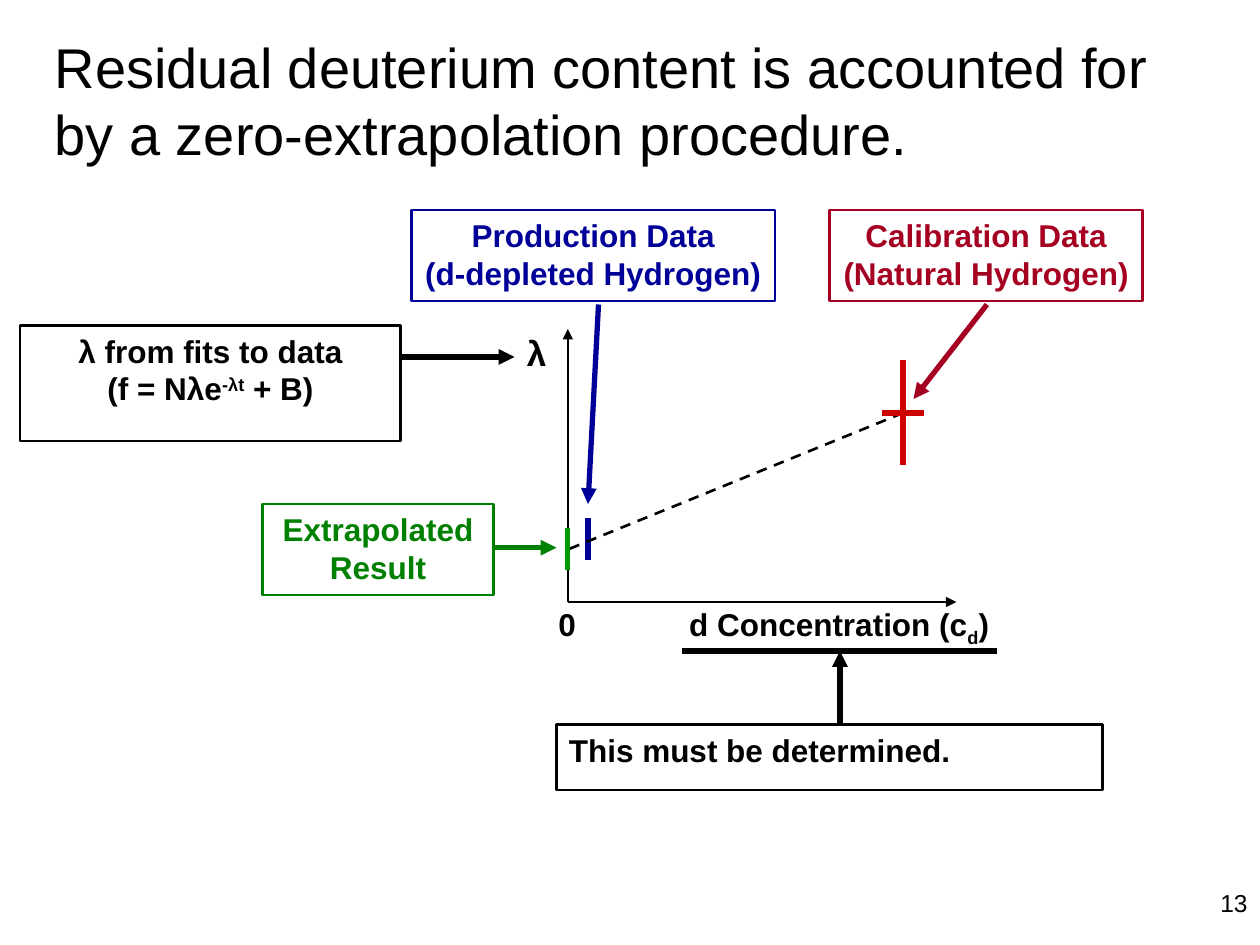
from lxml import etree
from pptx import Presentation
from pptx.dml.color import RGBColor
from pptx.enum.dml import MSO_LINE
from pptx.enum.shapes import MSO_CONNECTOR, MSO_SHAPE
from pptx.enum.text import MSO_ANCHOR, PP_ALIGN
from pptx.oxml.ns import qn
from pptx.util import Pt

STRAIGHT = MSO_CONNECTOR.STRAIGHT
RECTANGLE = MSO_SHAPE.RECTANGLE
DASH = MSO_LINE.DASH
TOP, MIDDLE = MSO_ANCHOR.TOP, MSO_ANCHOR.MIDDLE
LEFT, CENTER, RIGHT = PP_ALIGN.LEFT, PP_ALIGN.CENTER, PP_ALIGN.RIGHT

COLORS = {
    "black": "000000",
    "blue": "000099",
    "red": "CC0000",
    "crimson": "A50021",
    "green": "008000",
    "bright green": "009900",
}


class SlideBuilder:
    """Draws styled elements on one slide, with lengths in points."""

    def __init__(self, slide, font="Arial"):
        self.slide = slide
        self.font = font

    def color(self, name):
        return RGBColor.from_string(COLORS[name])

    def add_text(self, frame, paragraphs, size, color="black", bold=True,
                 align=CENTER, anchor=TOP, wrap=True):
        frame.word_wrap = wrap
        frame.vertical_anchor = anchor
        for index, runs in enumerate(paragraphs):
            paragraph = frame.add_paragraph() if index else frame.paragraphs[0]
            paragraph.alignment = align
            for text, baseline in runs:
                run = paragraph.add_run()
                run.text = text
                run.font.name = self.font
                run.font.size = Pt(size)
                run.font.bold = bold
                run.font.color.rgb = self.color(color)
                if baseline:
                    run._r.get_or_add_rPr().set("baseline", str(baseline * 1000))

    def title(self, bounds, text):
        shape = self.slide.shapes.title
        shape.left, shape.top, shape.width, shape.height = map(Pt, bounds)
        self.add_text(shape.text_frame, [[(text, 0)]], 32, bold=False,
                      align=LEFT, anchor=MIDDLE)

    def label(self, bounds, runs, size=18, **style):
        shape = self.slide.shapes.add_textbox(*map(Pt, bounds))
        self.add_text(shape.text_frame, [runs], size, **style)

    def box(self, bounds, paragraphs, color="black", **style):
        shape = self.slide.shapes.add_shape(RECTANGLE, *map(Pt, bounds))
        shape.shadow.inherit = False
        shape.fill.background()
        shape.line.color.rgb = self.color(color)
        shape.line.width = Pt(1.5)
        self.add_text(shape.text_frame, paragraphs, 18, color, **style)

    def line(self, start, end, color="black", width=3, arrow=False, dash=None):
        connector = self.slide.shapes.add_connector(
            STRAIGHT, *map(Pt, (*start, *end)))
        connector.line.color.rgb = self.color(color)
        connector.line.width = Pt(width)
        if dash:
            connector.line.dash_style = dash
        if arrow:
            etree.SubElement(connector.line._get_or_add_ln(),
                             qn("a:tailEnd"), type="triangle")
        etree.SubElement(connector._element.spPr, qn("a:effectLst"))


def main():
    presentation = Presentation()
    presentation.slide_width, presentation.slide_height = Pt(720), Pt(540)
    slide = presentation.slides.add_slide(presentation.slide_layouts[5])
    builder = SlideBuilder(slide)

    builder.label((570, 504, 150, 36), [("13", 0)], 14, bold=False, align=RIGHT)
    builder.title((24, 12, 678, 90), "Residual deuterium content is accounted "
                  "for by a zero-extrapolation procedure.")

    origin = (324.5, 344)
    calibration = (516, 236)
    builder.line(origin, (546.5, 344), width=1.5, arrow=True)
    builder.line(origin, (324.5, 188), width=1.5, arrow=True)
    builder.label((294, 186, 25, 31), [("λ", 0)], 20, wrap=False)
    builder.label((386, 342, 187, 29),
                  [("d Concentration (c", 0), ("d", -25), (")", 0)], wrap=False)
    builder.label((312, 342, 24, 29), [("0", 0)], wrap=False)

    builder.line((336, 296), (336, 320), "blue")
    builder.line((516, 206), (516, 266), "red")
    builder.line(calibration, (324.5, 314), width=1.5, dash=DASH)
    builder.line((324.5, 302), (324.5, 326), "bright green")
    builder.line((504, 236), (528, 236), "red")

    builder.box((235, 120, 208, 52),
                [[("Production Data", 0)], [("(d-depleted Hydrogen)", 0)]],
                "blue", wrap=False)
    builder.line((342, 174), (336, 288), "blue", arrow=True)
    builder.box((474, 120, 179, 52),
                [[("Calibration Data", 0)], [("(Natural Hydrogen)", 0)]],
                "crimson", wrap=False)
    builder.line((564, 174), (522, 228), "crimson", arrow=True)
    builder.box((150, 288, 132, 52),
                [[("Extrapolated", 0)], [("Result", 0)]], "green")
    builder.line((282, 313), (318, 313), "green", arrow=True)

    builder.box((11.5, 186, 217.5, 66),
                [[("λ from fits to data", 0)],
                 [("(f = Nλe", 0), ("-λt", 30), (" + B)", 0)]], wrap=False)
    builder.line((228, 204), (294, 204), arrow=True)
    builder.line((390, 372), (570, 372))
    builder.box((318, 414, 312, 37.5), [[("This must be determined.", 0)]],
                align=LEFT)
    builder.line((480, 414), (480, 372), arrow=True)

    presentation.save("out.pptx")


if __name__ == "__main__":
    main()
